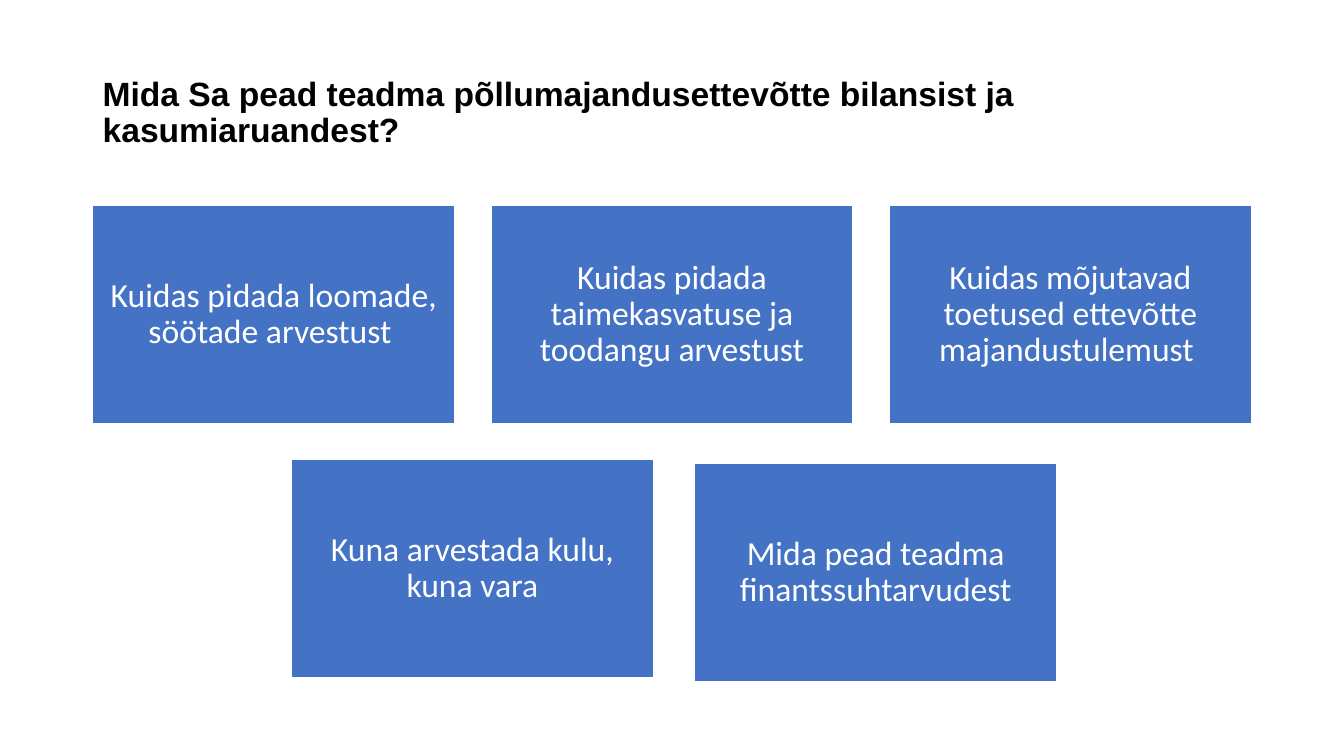
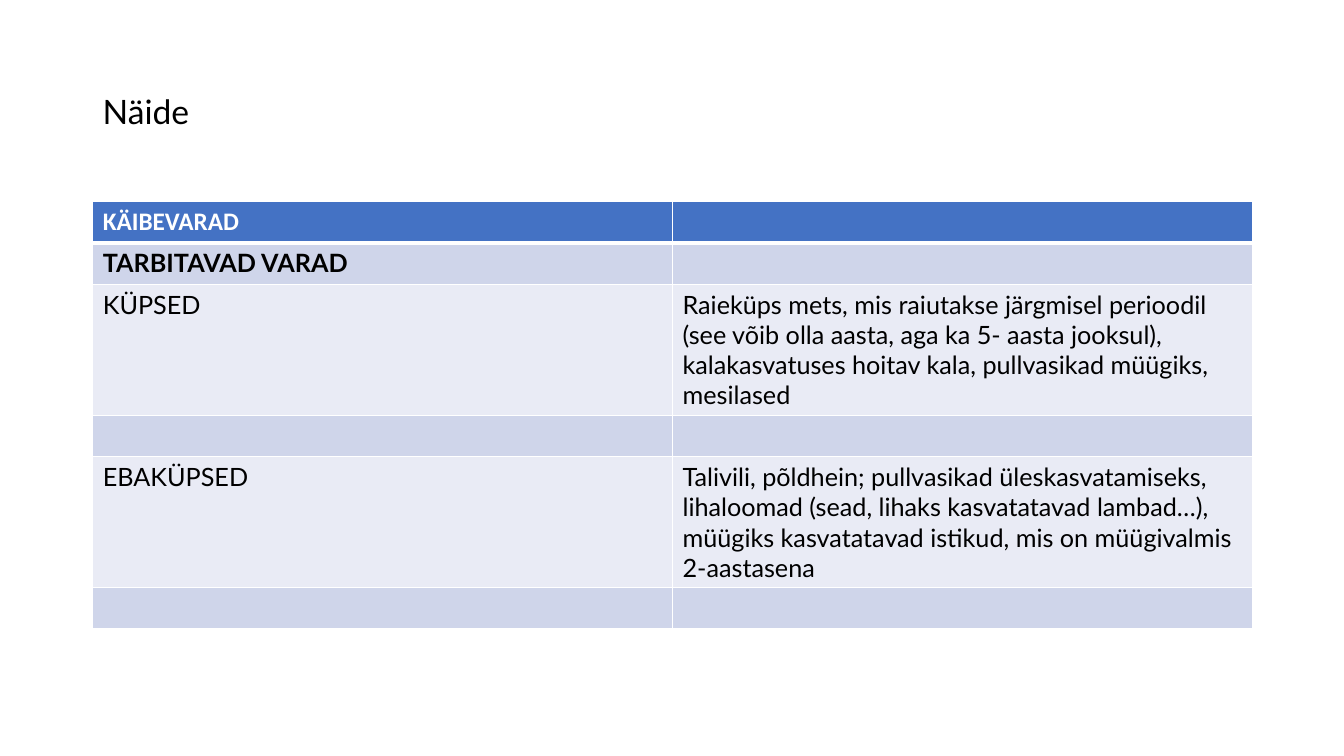
from lxml.etree import SubElement
from pptx import Presentation
from pptx.dml.color import RGBColor
from pptx.enum.shapes import MSO_SHAPE as Shape
from pptx.enum.text import MSO_ANCHOR as Anchor, PP_ALIGN as Align
from pptx.oxml import parse_xml
from pptx.oxml.ns import nsdecls, qn
from pptx.util import Inches, Pt

# Shared colours, fonts and measures
BLACK = RGBColor(0x00, 0x00, 0x00)
WHITE = RGBColor(0xFF, 0xFF, 0xFF)
BLUE = RGBColor(0x44, 0x72, 0xC4)
BAND_DARK = RGBColor(0xCF, 0xD5, 0xEA)
BAND_LIGHT = RGBColor(0xE9, 0xEB, 0xF5)
BODY_FONT, EXAMPLE_FONT, HEADING_FONT = "Calibri", "Lato", "Arial"
LEFT, CONTENT_WIDTH = 0.92, 11.5

# Question boxes: top, left of the first box, step, texts
BOX_WIDTH, BOX_HEIGHT = 3.59, 2.16
TOP_QUESTIONS = [
    "Kuidas pidada loomade, söötade arvestust ",
    "Kuidas pidada taimekasvatuse ja toodangu arvestust",
    "Kuidas mõjutavad toetused ettevõtte majandustulemust ",
]
BOX_STEP = 3.95
LOWER_QUESTIONS = [
    (2.89, 4.56, "Kuna arvestada kulu, kuna vara"),
    (6.89, 4.6, "Mida pead teadma finantssuhtarvudest"),
]

# Asset table: height, left text, right text
ROW_HEIGHT, TALL_ROW_HEIGHT = 0.41, 1.3
ASSET_ROWS = [
    (ROW_HEIGHT, "KÄIBEVARAD", ""),
    (ROW_HEIGHT, "TARBITAVAD VARAD", ""),
    (TALL_ROW_HEIGHT, "KÜPSED",
     "Raieküps mets, mis raiutakse järgmisel perioodil (see võib olla aasta, "
     "aga ka 5- aasta jooksul), kalakasvatuses hoitav kala, pullvasikad "
     "müügiks, mesilased"),
    (ROW_HEIGHT, "", ""),
    (TALL_ROW_HEIGHT, "EBAKÜPSED",
     "Talivili, põldhein; pullvasikad üleskasvatamiseks, lihaloomad (sead, "
     "lihaks kasvatatavad lambad…), müügiks kasvatatavad istikud, mis on "
     "müügivalmis 2-aastasena"),
    (ROW_HEIGHT, "", ""),
]


def add_run(paragraph, text, size, font, color, bold=False):
    run = paragraph.add_run()
    run.text = text
    run.font.size = Pt(size)
    run.font.name = font
    run.font.color.rgb = color
    run.font.bold = bold


def add_title(slide, text, font, bold=False):
    title = slide.shapes.add_textbox(
        Inches(LEFT), Inches(0.4), Inches(CONTENT_WIDTH), Inches(1.45))
    frame = title.text_frame
    frame.word_wrap = True
    frame.vertical_anchor = Anchor.MIDDLE
    paragraph = frame.paragraphs[0]
    paragraph.line_spacing = 0.9
    add_run(paragraph, text, 24, font, BLACK, bold)


def add_question(slide, left, top, text):
    box = slide.shapes.add_shape(
        Shape.RECTANGLE, Inches(left), Inches(top),
        Inches(BOX_WIDTH), Inches(BOX_HEIGHT))
    box.shadow.inherit = False
    box.fill.solid()
    box.fill.fore_color.rgb = BLUE
    box.line.color.rgb = WHITE
    box.line.width = Pt(1)
    frame = box.text_frame
    frame.word_wrap = True
    frame.vertical_anchor = Anchor.MIDDLE
    frame.margin_left = frame.margin_right = Inches(0.1)
    frame.margin_top = frame.margin_bottom = Inches(0.1)
    paragraph = frame.paragraphs[0]
    paragraph.alignment = Align.CENTER
    paragraph.line_spacing = 0.9
    add_run(paragraph, text, 24, BODY_FONT, WHITE)


def set_borders(cell, top, bottom):
    """White cell borders; widths in points."""
    properties = cell._tc.get_or_add_tcPr()
    widths = {"lnL": 1, "lnR": 1, "lnT": top, "lnB": bottom}
    for position, (side, width) in enumerate(widths.items()):
        border = parse_xml(f'<a:{side} {nsdecls("a")} w="{Pt(width)}"/>')
        fill = SubElement(border, qn("a:solidFill"))
        SubElement(fill, qn("a:srgbClr"), val=str(WHITE))
        properties.insert(position, border)


def add_asset_table(slide, rows):
    total_height = sum(height for height, *_ in rows)
    table = slide.shapes.add_table(
        len(rows), 2, Inches(LEFT), Inches(2),
        Inches(CONTENT_WIDTH), Inches(total_height)).table
    for column in table.columns:
        column.width = Inches(CONTENT_WIDTH / 2)
    for index, (height, *texts) in enumerate(rows):
        table.rows[index].height = Inches(height)
        header = index == 0
        band = BAND_DARK if index % 2 else BAND_LIGHT
        for cell, text in zip(table.rows[index].cells, texts):
            cell.fill.solid()
            cell.fill.fore_color.rgb = BLUE if header else band
            set_borders(cell, 3 if index == 1 else 1, 3 if header else 1)
            if text:
                add_run(cell.text_frame.paragraphs[0], text, 18,
                        BODY_FONT if header else EXAMPLE_FONT,
                        WHITE if header else BLACK, bold=index < 2)


def build_questions(slide):
    add_title(slide, "Mida Sa pead teadma põllumajandusettevõtte bilansist ja "
              "kasumiaruandest?", HEADING_FONT, bold=True)
    for index, text in enumerate(TOP_QUESTIONS):
        add_question(slide, LEFT + index * BOX_STEP, 2.04, text)
    for left, top, text in LOWER_QUESTIONS:
        add_question(slide, left, top, text)


def build_example(slide):
    add_title(slide, "Näide", EXAMPLE_FONT)
    add_asset_table(slide, ASSET_ROWS)


def main():
    deck = Presentation()
    deck.slide_width, deck.slide_height = Inches(13.33), Inches(7.5)
    blank = deck.slide_layouts[6]
    for build in (build_questions, build_example):
        build(deck.slides.add_slide(blank))
    deck.save("out.pptx")


if __name__ == "__main__":
    main()
